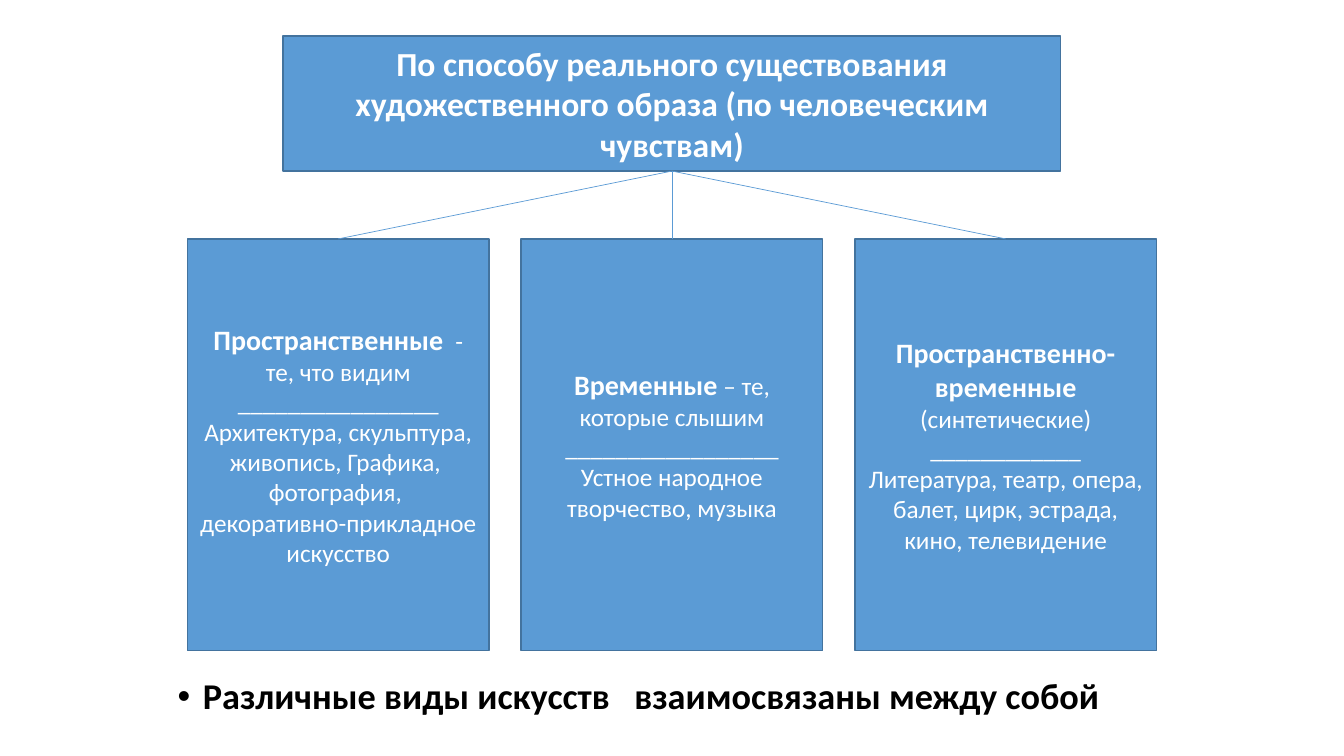
from dataclasses import dataclass

from lxml import etree
from pptx import Presentation
from pptx.dml.color import RGBColor
from pptx.enum.shapes import MSO_CONNECTOR, MSO_SHAPE
from pptx.enum.text import MSO_ANCHOR, MSO_AUTO_SIZE, PP_ALIGN
from pptx.oxml.ns import qn
from pptx.shapes.autoshape import Shape
from pptx.slide import Slide
from pptx.text.text import _Run
from pptx.util import Cm, Pt

RECT = MSO_SHAPE.RECTANGLE
STRAIGHT = MSO_CONNECTOR.STRAIGHT
MIDDLE, TOP = MSO_ANCHOR.MIDDLE, MSO_ANCHOR.TOP
CENTER, LEFT = PP_ALIGN.CENTER, PP_ALIGN.LEFT
NO_FIT = MSO_AUTO_SIZE.NONE
TOP_SIDE, BOTTOM_SIDE = 0, 2
CONTENT_LAYOUT = 1


@dataclass(frozen=True)
class Theme:
    font: str = "Calibri"
    fill: RGBColor = RGBColor(0x5B, 0x9B, 0xD5)
    edge: RGBColor = RGBColor(0x43, 0x73, 0x9E)
    light: RGBColor = RGBColor(0xFF, 0xFF, 0xFF)
    dark: RGBColor = RGBColor(0, 0, 0)
    head: float = 24
    term: float = 20
    body: float = 18
    note: float = 25.9


@dataclass(frozen=True)
class Box:
    left: float
    top: float
    width: float
    height: float


@dataclass(frozen=True)
class Kind:
    term: str
    text: str


THEME = Theme()
WIDTH, HEIGHT = 33.87, 19.05
HEAD = Box((WIDTH - 19.6) / 2, 0.91, 19.6, 3.4)
CARD = Box((WIDTH - 7.6) / 2, 6.02, 7.6, 10.38)
STEP = 8.41
NOTE = Box(4.22, 16.97, 25.4, 2.08)

TITLE = "По способу реального существования художественного образа (по человеческим чувствам)"
SUMMARY = "Различные виды искусств   взаимосвязаны между собой"
KINDS = [
    Kind("Пространственные ",
         " - те, что видим ________________ Архитектура, скульптура, живопись, "
         "Графика,  фотография,  декоративно-прикладное искусство"),
    Kind("Временные",
         " – те, которые слышим _________________ Устное народное творчество, музыка"),
    Kind("Пространственно-временные ",
         "(синтетические) ____________ Литература, театр, опера, балет, цирк, "
         "эстрада, кино, телевидение"),
]


def style(run: _Run, size: float, color: RGBColor, bold: bool) -> None:
    font = run.font
    font.name, font.size, font.bold = THEME.font, Pt(size), bold
    font.color.rgb = color


def add_box(slide: Slide, box: Box, text: str, size: float) -> Shape:
    shape = slide.shapes.add_shape(
        RECT, Cm(box.left), Cm(box.top), Cm(box.width), Cm(box.height))
    shape.shadow.inherit = False
    shape.fill.solid()
    shape.fill.fore_color.rgb = THEME.fill
    shape.line.color.rgb = THEME.edge
    shape.line.width = Pt(1)
    frame = shape.text_frame
    frame.word_wrap = True
    frame.vertical_anchor = MIDDLE
    frame.text = text
    para = frame.paragraphs[0]
    para.alignment = CENTER
    style(para.runs[0], size, THEME.light, True)
    return shape


def add_card(slide: Slide, kind: Kind, index: int) -> Shape:
    left = CARD.left + (index - 1) * STEP
    box = Box(left, CARD.top, CARD.width, CARD.height)
    card = add_box(slide, box, kind.term, THEME.term)
    run = card.text_frame.paragraphs[0].add_run()
    run.text = kind.text
    style(run, THEME.body, THEME.light, False)
    return card


def add_link(slide: Slide, head: Shape, card: Shape) -> None:
    link = slide.shapes.add_connector(STRAIGHT, 0, 0, 0, 0)
    link.begin_connect(head, BOTTOM_SIDE)
    link.end_connect(card, TOP_SIDE)
    link.line.color.rgb = THEME.fill
    link.line.width = Pt(0.5)
    etree.SubElement(link._element.spPr, qn("a:effectLst"))


def add_note(slide: Slide) -> None:
    note = slide.placeholders[1]
    note.left, note.top = Cm(NOTE.left), Cm(NOTE.top)
    note.width, note.height = Cm(NOTE.width), Cm(NOTE.height)
    frame = note.text_frame
    frame.word_wrap = True
    frame.auto_size = NO_FIT
    frame.vertical_anchor = TOP
    frame.text = SUMMARY
    para = frame.paragraphs[0]
    para.alignment = LEFT
    para.line_spacing = 0.9
    para.space_before = Pt(10)
    style(para.runs[0], THEME.note, THEME.dark, True)
    # Bullet with a hanging indent
    props = para._p.get_or_add_pPr()
    props.set("marL", str(Cm(0.64)))
    props.set("indent", str(-Cm(0.64)))
    etree.SubElement(props, qn("a:buFont"), typeface="Arial")
    etree.SubElement(props, qn("a:buChar"), char="•")


def main() -> None:
    deck = Presentation()
    deck.slide_width, deck.slide_height = Cm(WIDTH), Cm(HEIGHT)
    slide = deck.slides.add_slide(deck.slide_layouts[CONTENT_LAYOUT])

    # The slide has no title
    blank = slide.shapes.title._element
    blank.getparent().remove(blank)

    # Summary line
    add_note(slide)

    # Heading, cards and the links between them
    head = add_box(slide, HEAD, TITLE, THEME.head)
    cards = [add_card(slide, kind, i) for i, kind in enumerate(KINDS)]
    for card in cards:
        add_link(slide, head, card)

    deck.save("out.pptx")


if __name__ == "__main__":
    main()
